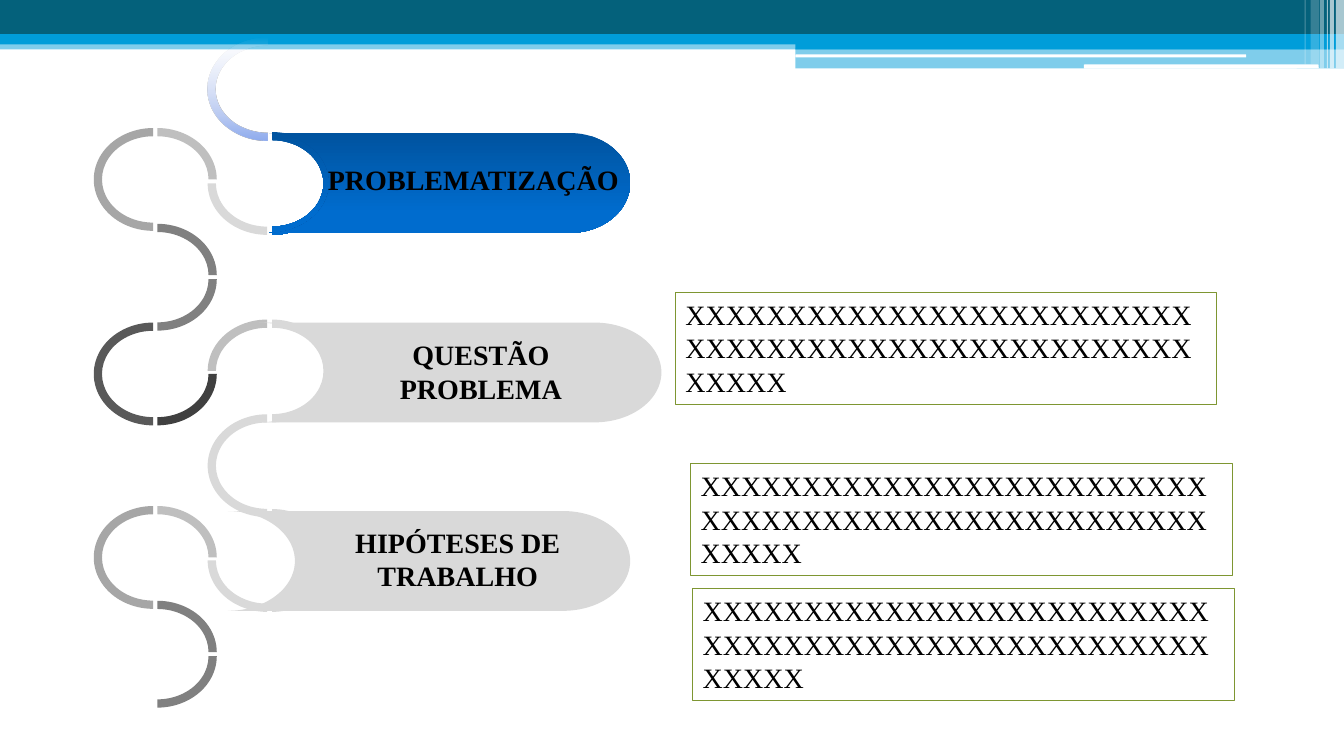
from lxml import etree
from pptx import Presentation
from pptx.dml.color import RGBColor
from pptx.enum import shapes, text
from pptx.oxml import ns
from pptx.util import Inches, Pt

KIND = shapes.MSO_SHAPE
FONT = "Times New Roman"
BLACK = RGBColor(0, 0, 0)
WHITE = RGBColor(255, 255, 255)
TEAL = RGBColor(0x04, 0x61, 0x7B)
CYAN = RGBColor(0x00, 0x9D, 0xD9)
OLIVE = RGBColor(0x7E, 0x96, 0x32)
PALE, LIGHT, MID, GREY, DARK, COAL = (
    RGBColor(v, v, v) for v in (0xD9, 0xBF, 0xA6, 0x80, 0x59, 0x40))
# Gradient stops: position, colour, opacity (percent)
BLUE = [(0, "00539F", 100), (80, "006CCE", 100), (100, "006DCF", 100)]
FADE = [(0, "8EABEE", 100), (25, "BBCBF2", 100), (100, "DEE5F8", 0)]


def shade(shape, stops, angle):
    """Fill with a linear gradient; the angle runs clockwise."""
    grad = etree.Element(ns.qn("a:gradFill"), rotWithShape="1")
    group = etree.SubElement(grad, ns.qn("a:gsLst"))
    for pos, code, alpha in stops:
        stop = etree.SubElement(group, ns.qn("a:gs"), pos=str(pos * 1000))
        tint = etree.SubElement(stop, ns.qn("a:srgbClr"), val=code)
        if alpha < 100:
            etree.SubElement(tint, ns.qn("a:alpha"), val=str(alpha * 1000))
    etree.SubElement(grad, ns.qn("a:lin"), ang=str(angle * 60000), scaled="0")
    shape._element.spPr.find(ns.qn("a:ln")).addprevious(grad)


def paint(shape, fill, angle=90):
    """Fill with a colour or with gradient stops, with no line or shadow."""
    shape.shadow.inherit = False
    shape.line.fill.background()
    if isinstance(fill, RGBColor):
        shape.fill.solid()
        shape.fill.fore_color.rgb = fill
    else:
        shade(shape, fill, angle)


def add_bar(slide, box, color, alpha=100, kind=KIND.RECTANGLE):
    bar = slide.shapes.add_shape(kind, *map(Inches, box))
    paint(bar, color)
    if alpha < 100:
        tint = bar._element.spPr.find(".//" + ns.qn("a:srgbClr"))
        etree.SubElement(tint, ns.qn("a:alpha"), val=str(alpha * 1000))


def add_banner(slide, width):
    half = 7.89
    add_bar(slide, (0, 0.4, width, 0.09), CYAN, 50)
    add_bar(slide, (0, 0, width, 0.34), TEAL)
    add_bar(slide, (0, 0.34, width, 0.1), CYAN)
    add_bar(slide, (half, 0.39, width - half, 0.1), CYAN)
    add_bar(slide, (half, 0.48, width - half, 0.2), CYAN, 50)
    add_bar(slide, (half, 0.54, 4.47, 0.03), WHITE, kind=KIND.ROUNDED_RECTANGLE)
    add_bar(slide, (10.75, 0.64, 2.33, 0.04), WHITE, kind=KIND.ROUNDED_RECTANGLE)
    for left, wide, high, alpha in (
            (13.25, 0.08, 0.68, 65), (13.19, 0.04, 0.68, 65),
            (13.16, 0.01, 0.68, 60), (13.09, 0.04, 0.68, 40),
            (13, 0.08, 0.64, 20), (12.94, 0.01, 0.64, 30)):
        add_bar(slide, (left, 0, wide, high), WHITE, alpha)


def add_arc(slide, x, y, start, end, fill, angle=90):
    """Draw part of an oval ring around x, y; degrees run clockwise."""
    wide, high = 1.18, 1.02
    arc = slide.shapes.add_shape(
        KIND.BLOCK_ARC, Inches(x - wide / 2), Inches(y - high / 2),
        Inches(wide), Inches(high))
    # Angles are stored in 60000ths of a degree, adjustments in 100000ths
    arc.adjustments[0] = start * 0.6
    arc.adjustments[1] = end * 0.6
    arc.adjustments[2] = 0.08
    paint(arc, fill, angle)


def add_chain(slide):
    inner, outer = 1.52, 2.65
    east, west = inner + 0.04, outer + 0.05
    add_arc(slide, outer, 0.88, 90, 270, FADE, 270)
    for x, y, start, end, fill in (
            (outer, 1.82, 90, 180, PALE), (east, 1.78, 270, 0, LIGHT),
            (inner, 1.78, 90, 270, MID), (east, 2.73, 270, 0, GREY),
            (east, 2.77, 0, 90, GREY), (inner, 3.71, 90, 270, DARK),
            (east, 3.71, 0, 90, COAL), (outer, 3.68, 180, 270, LIGHT),
            (outer, 4.62, 90, 270, PALE), (outer, 5.56, 90, 180, PALE),
            (east, 5.53, 270, 0, LIGHT), (inner, 5.53, 90, 270, MID),
            (east, 6.47, 270, 0, GREY), (east, 6.51, 0, 90, GREY),
            (west, 1.82, 270, 90, BLUE), (west, 3.68, 270, 90, PALE),
            (west, 5.56, 270, 90, PALE)):
        add_arc(slide, x, y, start, end, fill)


def write(shape, words, align, bold=False):
    frame = shape.text_frame
    frame.word_wrap = True
    frame.vertical_anchor = text.MSO_ANCHOR.TOP
    frame.text = words
    par = frame.paragraphs[0]
    par.alignment = align
    par.font.name, par.font.size, par.font.bold = FONT, Pt(20), bold
    par.font.color.rgb = BLACK


def add_step(slide, box, fill, label, area):
    pill = slide.shapes.add_shape(KIND.FLOWCHART_STORED_DATA, *map(Inches, box))
    pill.rotation = 180
    paint(pill, fill, 270)
    title = slide.shapes.add_textbox(*map(Inches, area))
    write(title, label, text.PP_ALIGN.CENTER, True)


def add_note(slide, left, top):
    note = slide.shapes.add_shape(
        KIND.RECTANGLE, Inches(left), Inches(top), Inches(5.37), Inches(1.11))
    note.shadow.inherit = False
    note.fill.background()
    note.line.color.rgb = OLIVE
    note.line.width = Pt(0.75)
    write(note, "X" * 55, text.PP_ALIGN.JUSTIFY)


def main():
    deck = Presentation()
    deck.slide_width, deck.slide_height = Inches(13.33), Inches(7.5)
    slide = deck.slides.add_slide(deck.slide_layouts[6])
    add_banner(slide, 13.33)
    add_chain(slide)
    add_step(slide, (2.67, 1.32, 3.58, 0.99), BLUE,
             "PROBLEMATIZAÇÃO", (3.02, 1.56, 3.35, 0.44))
    add_step(slide, (2.26, 5.07, 3.99, 0.99), PALE,
             "HIPÓTESES DE TRABALHO", (3.23, 5.16, 2.62, 0.77))
    add_step(slide, (2.57, 3.2, 3.99, 0.99), PALE,
             "QUESTÃO PROBLEMA", (3.46, 3.3, 2.62, 0.77))
    for left, top in ((6.7, 2.9), (6.85, 4.6), (6.87, 5.84)):
        add_note(slide, left, top)
    deck.save("out.pptx")


if __name__ == "__main__":
    main()
